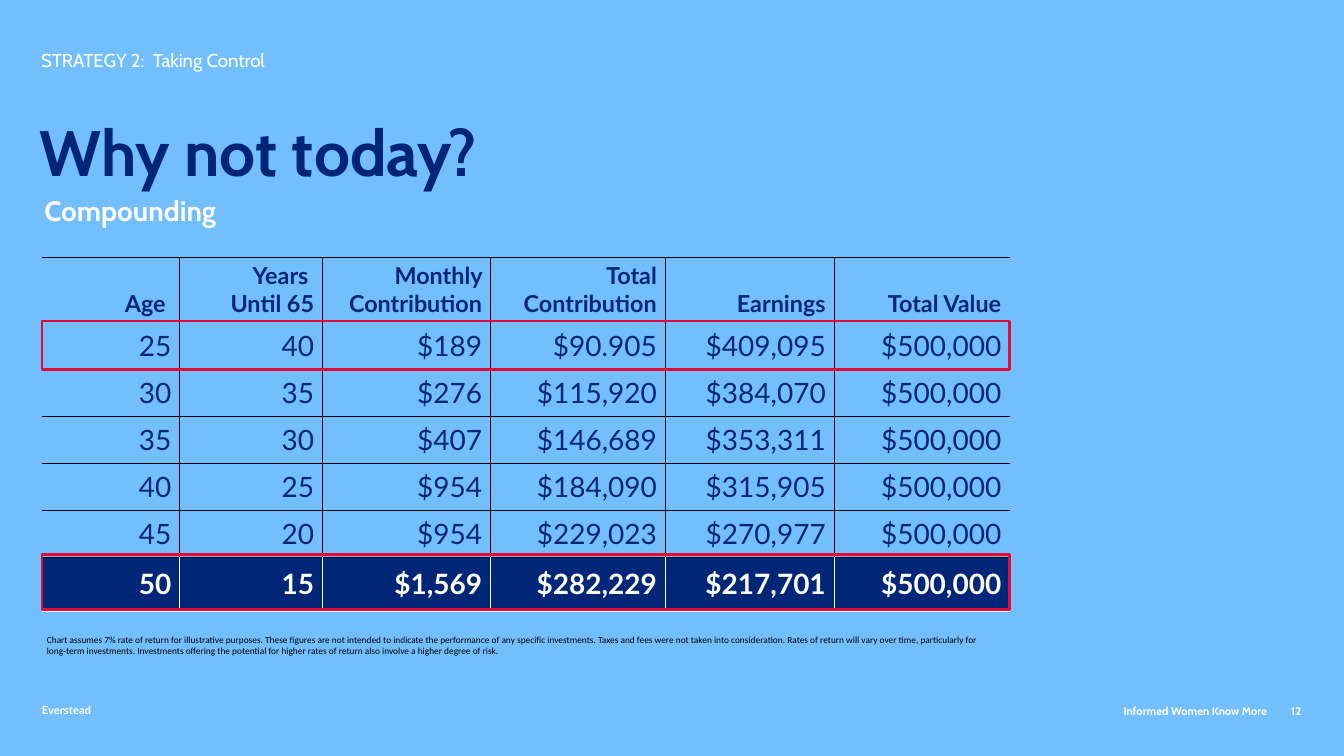
from lxml import etree
from pptx import Presentation
from pptx.dml.color import RGBColor
from pptx.enum import shapes, text
from pptx.oxml.ns import qn
from pptx.util import Inches, Pt

COLORS = {"sky": "73BFFE", "navy": "002677", "title": "002577",
          "white": "FFFFFF", "black": "000000", "red": "E40A38"}
STRATEGY = "STRATEGY 2:  Taking Control"
TITLE = "Why not today?"
SUBTITLE = "Compounding"
NOTE = ("Chart assumes 7% rate of return for illustrative purposes. These figures are not "
        "intended to indicate the performance of any specific investments. Taxes and fees were "
        "not taken into consideration. Rates of return will vary over time, particularly for "
        "long-term investments. Investments offering the potential for higher rates of return "
        "also involve a higher degree of risk.")
ROWS = [
    ("Age ", "Years \vUntil 65", "Monthly Contribution", "Total Contribution", "Earnings", "Total Value"),
    ("25", "40", "$189", "$90.905", "$409,095", "$500,000"),
    ("30", "35", "$276", "$115,920", "$384,070", "$500,000"),
    ("35", "30", "$407", "$146,689", "$353,311", "$500,000"),
    ("40", "25", "$954", "$184,090", "$315,905", "$500,000"),
    ("45", "20", "$954", "$229,023", "$270,977", "$500,000"),
    ("50", "15", "$1,569", "$282,229", "$217,701", "$500,000"),
]
COL_WIDTHS = [1.64, 1.7, 2, 2.08, 2.01, 2.09]
ROW_HEIGHTS = [0.72] + [0.56] * 5 + [0.65]
TABLE_LEFT, TABLE_TOP, TABLE_WIDTH = 0.5, 3.06, 11.52
HIGHLIGHTS = [(3.82, 0.58), (6.6, 0.66)]
TOP, MIDDLE, BOTTOM = text.MSO_ANCHOR.TOP, text.MSO_ANCHOR.MIDDLE, text.MSO_ANCHOR.BOTTOM
LEFT, RIGHT = text.PP_ALIGN.LEFT, text.PP_ALIGN.RIGHT
LABELS = [
    (SUBTITLE, (0.43, 2.3, 7.92, 0.48), 24, "Cabin", "white", True, LEFT, TOP, 0.9),
    (NOTE, (0.46, 7.5, 11.37, 0.35), 8, "Calibri", "black", False, LEFT, TOP, 1),
    ("Everstead", (0.4, 8.33, 2.48, 0.24), 9.6, "Lato", "white", True, LEFT, MIDDLE, 1),
    ("Informed Women Know More", (9.78, 8.34, 5.4, 0.24), 9.6, "Cabin", "white", True, RIGHT, MIDDLE, 1),
    ("12", (15.19, 8.33, 0.4, 0.19), 9.6, "Cabin", "white", True, RIGHT, TOP, 1),
]


def rgb(name):
    return RGBColor.from_string(COLORS[name])


def style(p, size, font, color, bold, align):
    p.alignment = align
    p.font.size, p.font.name, p.font.bold = Pt(size), font, bold
    p.font.color.rgb = rgb(color)


def write(sp, words, box, size, font, color, bold, align, anchor, spacing):
    sp.left, sp.top, sp.width, sp.height = map(Inches, box)
    tf = sp.text_frame
    tf.text = words
    tf.word_wrap, tf.auto_size, tf.vertical_anchor = True, text.MSO_AUTO_SIZE.NONE, anchor
    p = tf.paragraphs[0]
    p.line_spacing, p.space_before = spacing, Pt(0)
    style(p, size, font, color, bold, align)


def border(cell, edges):
    tc_pr = cell._tc.get_or_add_tcPr()
    for i, (side, edge) in enumerate(edges.items()):
        ln = etree.Element(qn("a:ln" + side))
        if edge:
            color, width = edge
            ln.set("w", str(Pt(width)))
            fill = etree.SubElement(ln, qn("a:solidFill"))
            etree.SubElement(fill, qn("a:srgbClr"), val=COLORS[color])
        else:
            etree.SubElement(ln, qn("a:noFill"))
        tc_pr.insert(i, ln)


def add_savings_table(s):
    tbl = s.shapes.add_table(len(ROWS), len(COL_WIDTHS), Inches(TABLE_LEFT), Inches(TABLE_TOP),
                             Inches(TABLE_WIDTH), Inches(sum(ROW_HEIGHTS))).table
    tbl.first_row = tbl.horz_banding = False
    for col, width in zip(tbl.columns, COL_WIDTHS):
        col.width = Inches(width)
    last_row, last_col = len(ROWS) - 1, len(COL_WIDTHS) - 1
    thin, pale = ("black", 0.5), ("white", 1)
    for r, values in enumerate(ROWS):
        tbl.rows[r].height = Inches(ROW_HEIGHTS[r])
        head, total = r == 0, r == last_row
        for c, value in enumerate(values):
            cell = tbl.cell(r, c)
            cell.text = value
            cell.vertical_anchor = BOTTOM if head else MIDDLE
            style(cell.text_frame.paragraphs[0], 20 if head else 24, "Lato",
                  "white" if total else "navy", head or total, RIGHT)
            if total:
                cell.fill.solid()
                cell.fill.fore_color.rgb = rgb("navy")
                border(cell, {"L": pale, "R": pale, "T": thin, "B": pale})
            else:
                cell.fill.background()
                border(cell, {"L": thin if c else None, "R": thin if c < last_col else None,
                              "T": thin, "B": thin})


def main():
    prs = Presentation()
    prs.slide_width, prs.slide_height = Inches(16), Inches(9)
    s = prs.slides.add_slide(prs.slide_layouts[0])
    s.background.fill.solid()
    s.background.fill.fore_color.rgb = rgb("sky")
    write(s.shapes.title, STRATEGY, (0.39, 0.57, 3.46, 0.33), 16, "Cabin", "white", False,
          LEFT, BOTTOM, 0.9)
    write(s.placeholders[1], TITLE, (0.37, 1.39, 7.13, 0.77), 55, "Cabin", "title", True,
          LEFT, TOP, 0.9)
    for words, box, *look in LABELS:
        write(s.shapes.add_textbox(0, 0, 0, 0), words, box, *look)
    add_savings_table(s)
    for top, height in HIGHLIGHTS:
        sp = s.shapes.add_shape(shapes.MSO_SHAPE.RECTANGLE, Inches(TABLE_LEFT), Inches(top),
                                Inches(TABLE_WIDTH), Inches(height))
        sp.shadow.inherit = False
        sp.fill.background()
        sp.line.color.rgb, sp.line.width = rgb("red"), Pt(2.25)
    prs.save("out.pptx")


if __name__ == "__main__":
    main()
